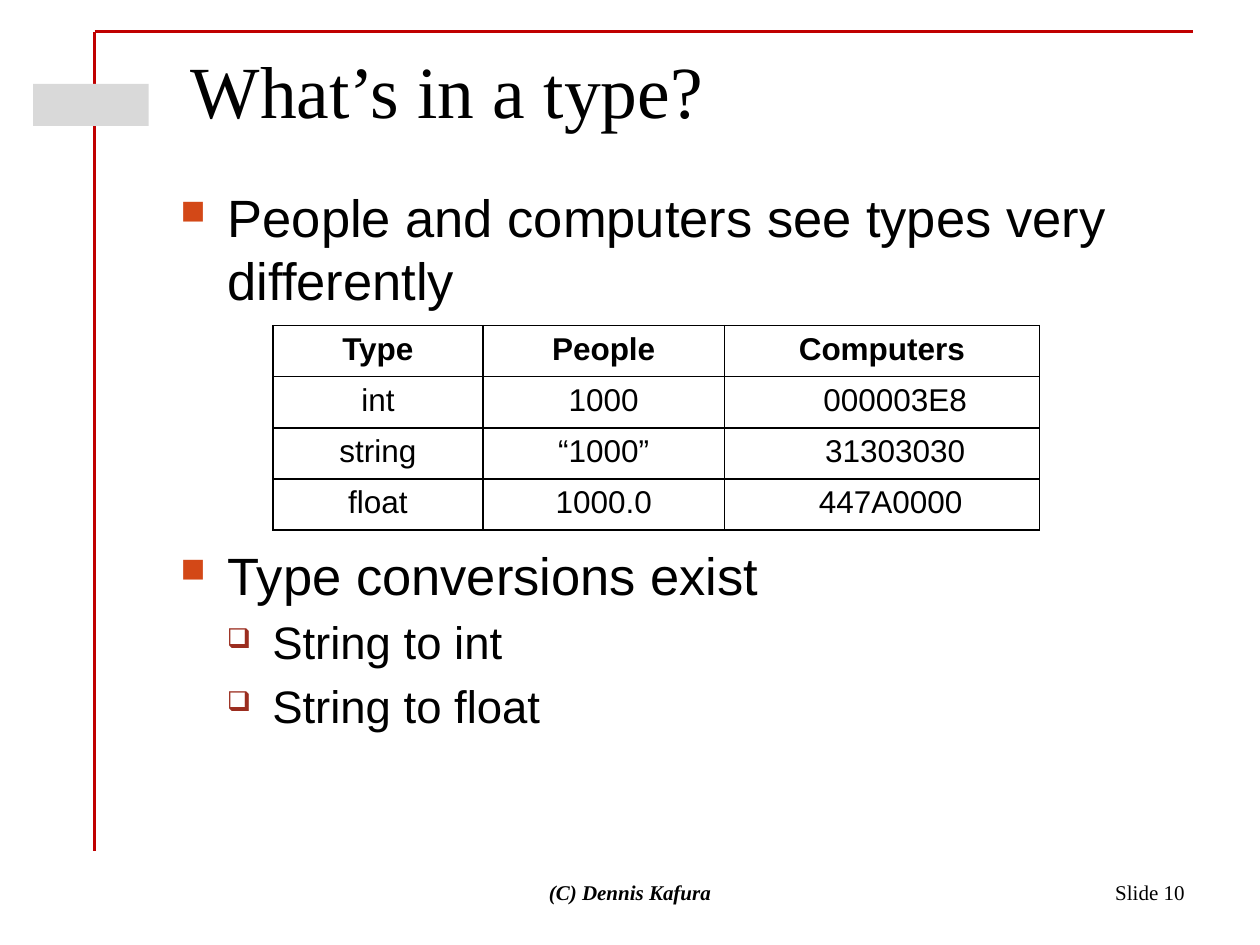
from lxml.etree import SubElement
from pptx import Presentation
from pptx.dml.color import RGBColor
from pptx.enum.shapes import MSO_CONNECTOR, MSO_SHAPE
from pptx.enum.text import MSO_ANCHOR, PP_ALIGN
from pptx.oxml import parse_xml
from pptx.oxml.ns import nsdecls, qn
from pptx.util import Pt

BLACK = RGBColor(0x00, 0x00, 0x00)
RED = RGBColor(0xC0, 0x00, 0x00)
GRAY = RGBColor(0xD9, 0xD9, 0xD9)
ORANGE = RGBColor(0xD3, 0x48, 0x17)
BROWN = RGBColor(0x9B, 0x2D, 0x1F)

BULLETS = [
    {"char": "■", "color": ORANGE, "percent": 65, "indent": 27, "hang": 27, "size": 30, "before": 6},
    {"char": "❑", "color": BROWN, "percent": 60, "indent": 52.5, "hang": 26, "size": 26, "before": 5},
]
TABLE_ROWS = [
    ("Type", "People", "Computers"),
    ("int", "1000", "000003E8"),
    ("string", "“1000”", "31303030"),
    ("float", "1000.0", "447A0000"),
]
COMPUTER_MARGINS = [7.2, 22.2, 22.2, 17.2]


def format_font(font, **values):
    """Set the given attributes of a font and colour it black."""
    for name, value in values.items():
        setattr(font, name, value)
    font.color.rgb = BLACK


def add_text_box(slide, box, anchor=MSO_ANCHOR.TOP):
    """Add a wrapping text box and return its text frame."""
    frame = slide.shapes.add_textbox(*map(Pt, box)).text_frame
    frame.word_wrap = True
    frame.vertical_anchor = anchor
    return frame


def add_rule(slide, start, end, width):
    """Add a straight red rule without a shadow."""
    rule = slide.shapes.add_connector(MSO_CONNECTOR.STRAIGHT, *map(Pt, start + end))
    rule.line.color.rgb = RED
    rule.line.width = Pt(width)
    SubElement(rule._element.spPr, qn("a:effectLst"))


def add_frame(slide, box):
    """Add the top and left rules with a plain block set in the gap."""
    left, top, width, height = box
    add_rule(slide, (left, top), (left + width, top), 2)
    for start, end in ((0, 30), (54, height)):
        add_rule(slide, (left, top + start), (left, top + end), 1.75)
    block_box = (left - 35, top + 30, 66, 24)
    block = slide.shapes.add_shape(MSO_SHAPE.RECTANGLE, *map(Pt, block_box))
    block.shadow.inherit = False
    block.fill.solid()
    block.fill.fore_color.rgb = GRAY
    block.line.fill.background()


def add_title(slide, box, text):
    """Add the slide title."""
    frame = add_text_box(slide, box)
    frame.margin_top = Pt(4)
    frame.text = text
    format_font(frame.paragraphs[0].font, name="Times New Roman", size=Pt(42))


def add_bullets(slide, box, items):
    """Add a bulleted list of (level, text) items."""
    frame = add_text_box(slide, box)
    for index, (level, text) in enumerate(items):
        style = BULLETS[level]
        paragraph = frame.add_paragraph() if index else frame.paragraphs[0]
        paragraph.text = text
        paragraph.level = level
        if index:
            paragraph.space_before = Pt(style["before"])
        properties = paragraph._p.get_or_add_pPr()
        properties.set("marL", str(Pt(style["indent"])))
        properties.set("indent", str(-Pt(style["hang"])))
        color = SubElement(properties, qn("a:buClr"))
        SubElement(color, qn("a:srgbClr"), val=str(style["color"]))
        SubElement(properties, qn("a:buSzPct"), val=str(style["percent"] * 1000))
        SubElement(properties, qn("a:buChar"), char=style["char"])
        format_font(paragraph.font, name="Arial", size=Pt(style["size"]))


def add_borders(cell):
    """Draw a thin black line on every side of a cell."""
    properties = cell._tc.get_or_add_tcPr()
    for index, side in enumerate("LRTB"):
        properties.insert(index, parse_xml(
            f'<a:ln{side} {nsdecls("a")} w="{Pt(1)}"><a:solidFill>'
            f'<a:srgbClr val="{BLACK}"/></a:solidFill></a:ln{side}>'))


def add_type_table(slide, box, widths):
    """Add the table of how people and computers see each type."""
    table = slide.shapes.add_table(len(TABLE_ROWS), len(widths), *map(Pt, box)).table
    table.first_row = table.horz_banding = False
    for column, width in zip(table.columns, widths):
        column.width = Pt(width)
    for row_index, texts in enumerate(TABLE_ROWS):
        for column_index, text in enumerate(texts):
            cell = table.cell(row_index, column_index)
            cell.text = text
            cell.fill.background()
            add_borders(cell)
            paragraph = cell.text_frame.paragraphs[0]
            paragraph.alignment = PP_ALIGN.CENTER
            format_font(paragraph.font, name="Arial", size=Pt(18), bold=row_index == 0)
        cell.margin_left = Pt(COMPUTER_MARGINS[row_index])


def add_footer(slide, box, text, alignment, emphasis=False):
    """Add one footer text."""
    frame = add_text_box(slide, box, MSO_ANCHOR.MIDDLE)
    frame.text = text
    paragraph = frame.paragraphs[0]
    paragraph.alignment = alignment
    format_font(paragraph.font, name="Times New Roman", size=Pt(12), bold=emphasis, italic=emphasis)


def main():
    """Build and save the slide."""
    presentation = Presentation()
    presentation.slide_width, presentation.slide_height = Pt(720), Pt(540)
    slide = presentation.slides.add_slide(presentation.slide_layouts[6])
    add_frame(slide, (54, 18, 628, 468))
    add_title(slide, (102, 21.6, 582, 56), "What’s in a type?")
    add_bullets(slide, (96, 102, 588, 82), [(0, "People and computers see types very differently")])
    add_bullets(slide, (96, 306.5, 588, 161), [
        (0, "Type conversions exist"), (1, "String to int"), (1, "String to float")])
    add_footer(slide, (516, 492, 168, 36), "Slide 10", PP_ALIGN.RIGHT)
    add_footer(slide, (246, 492, 228, 36), "(C) Dennis Kafura", PP_ALIGN.CENTER, emphasis=True)
    add_type_table(slide, (156, 186, 438, 117), (120, 138, 180))
    presentation.save("out.pptx")


if __name__ == "__main__":
    main()
